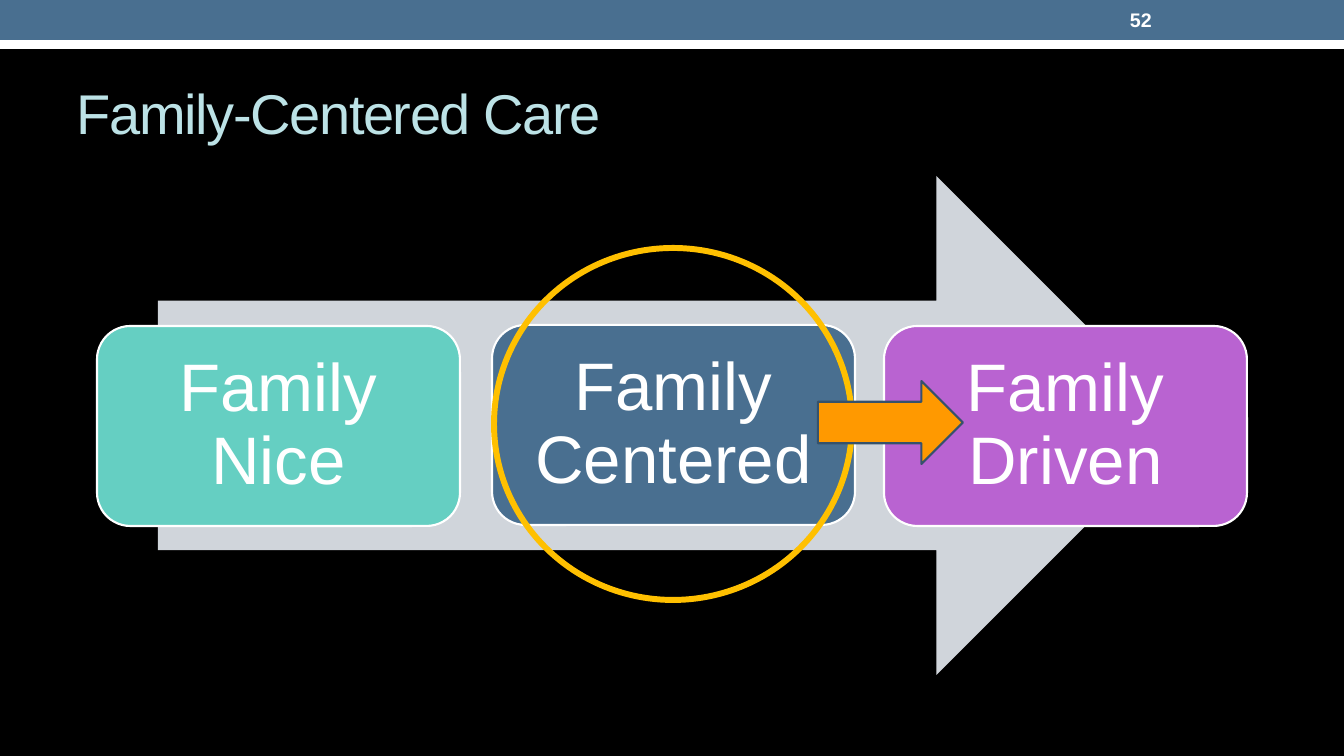
"""Build the Family-Centered Care slide."""
from pptx import Presentation
from pptx.dml.color import RGBColor
from pptx.enum.shapes import MSO_SHAPE
from pptx.enum.text import MSO_ANCHOR, PP_ALIGN
from pptx.util import Pt

PX = 914400 / 100.8
WHITE, BLUE = "FFFFFF", "496F90"
color = RGBColor.from_string


def draw(kind, place, fill=None, line=None, width=0):
    shape = slide.shapes.add_shape(kind, *[round(n * PX) for n in place])
    shape.shadow.inherit = False
    if fill:
        shape.fill.solid()
        shape.fill.fore_color.rgb = color(fill)
    else:
        shape.fill.background()
    if line:
        shape.line.color.rgb = color(line)
        shape.line.width = Pt(width)
    else:
        shape.line.fill.background()
    return shape


def write(shape, text, size, tint, inset, **style):
    frame = shape.text_frame
    side = round(inset * PX)
    form = {"word_wrap": True, "vertical_anchor": MSO_ANCHOR.MIDDLE,
            "margin_left": side, "margin_right": side,
            "margin_top": side, "margin_bottom": side}
    for name, value in form.items():
        setattr(frame, name, value)
    para = frame.paragraphs[0]
    for name, value in style.items():
        setattr(para, name, value)
    run = para.add_run()
    run.text = text
    for name, value in {"name": "Arial", "size": Pt(size)}.items():
        setattr(run.font, name, value)
    run.font.color.rgb = color(tint)
    return run


deck = Presentation()
deck.slide_width, deck.slide_height = round(1344 * PX), round(756 * PX)
slide = deck.slides.add_slide(deck.slide_layouts[6])
slide.background.fill.solid()
slide.background.fill.fore_color.rgb = color("000000")

draw(MSO_SHAPE.RECTANGLE, (0, 24, 1344, 25), WHITE)
draw(MSO_SHAPE.RECTANGLE, (0, 0, 1344, 40), BLUE)

title = slide.shapes.add_textbox(*[round(n * PX) for n in (67, 58, 1210, 109)])
run = write(title, "Family-Centered Care", 40, "BCE2E6", 10)
run.font._element.set("spc", "-100")

draw(MSO_SHAPE.RIGHT_ARROW, (158, 176, 1028, 499), "D0D5DB")

stages = [("Family Nice", 97, 326, "65CFC2"),
          ("Family Centered", 492, 325, BLUE),
          ("Family Driven", 884, 326, "B963D1")]
for text, left, top, fill in stages:
    box = draw(MSO_SHAPE.ROUNDED_RECTANGLE, (left, top, 363, 200),
               fill, WHITE, 1.5)
    write(box, text, 48, WHITE, 20,
          alignment=PP_ALIGN.CENTER, line_spacing=0.9)

page = slide.shapes.add_textbox(*[round(n * PX) for n in (1120, 2, 157, 36)])
run = write(page, "52", 14, WHITE, 10)
run.font.bold = True

draw(MSO_SHAPE.OVAL, (494, 248, 358, 352), None, "FFC000", 4.25)
draw(MSO_SHAPE.RIGHT_ARROW, (818, 381, 145, 83), "FF9900", "36526B", 1.5)

deck.save("out.pptx")
